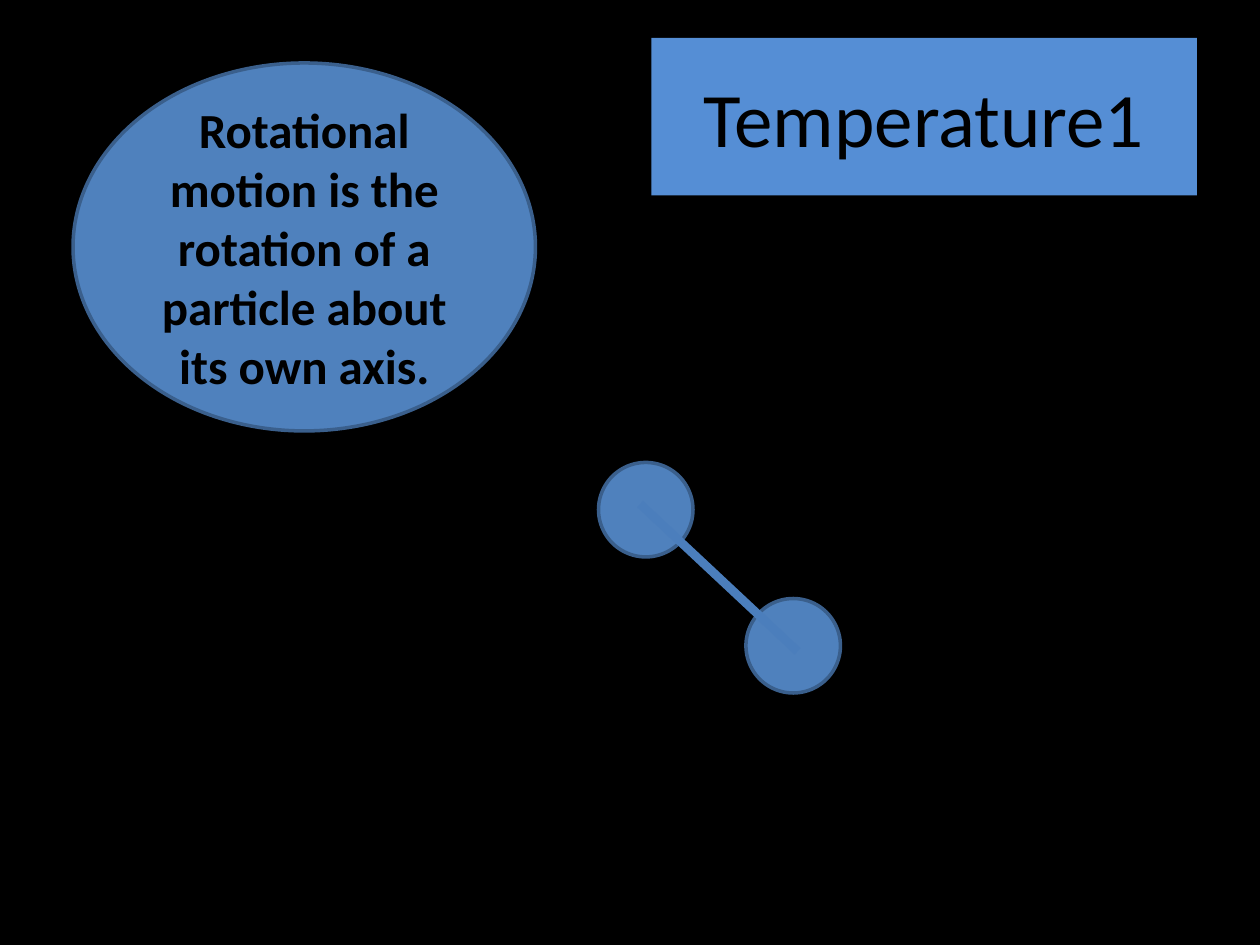
from dataclasses import dataclass

from pptx import Presentation
from pptx import util as u
from pptx.dml.color import RGBColor
from pptx.enum import shapes, text
from pptx.oxml.ns import qn

HUES = {"back": "000000", "title": "558ED5", "fill": "4F81BD",
        "edge": "3A5F8C", "bond": "4B7EBC", "text": "000000"}
FONT = "Calibri"


@dataclass
class Oval:
    left: float
    top: float
    width: float
    height: float


NOTE = Oval(0.58, 0.5, 3.67, 2.92)
ATOMS = [Oval(4.75, 3.67, 0.75, 0.75), Oval(5.92, 4.75, 0.75, 0.75)]
BOND = (5.08, 4, 6.33, 5.17)


def hue(name: str) -> RGBColor:
    return RGBColor.from_string(HUES[name])


def paint(fill, name: str) -> None:
    fill.solid()
    fill.fore_color.rgb = hue(name)


def write(shape, words: str, size: float, bold: bool = False) -> None:
    frame = shape.text_frame
    frame.text = words
    frame.word_wrap = True
    frame.vertical_anchor = text.MSO_ANCHOR.MIDDLE
    para = frame.paragraphs[0]
    para.alignment = text.PP_ALIGN.CENTER
    font = para.runs[0].font
    font.name, font.size, font.bold = FONT, u.Pt(size), bold
    font.color.rgb = hue("text")


def add_oval(host, oval: Oval):
    """Draw an outlined ellipse on a slide's or a group's shape tree."""
    shape = host.add_shape(
        shapes.MSO_SHAPE.OVAL, u.Inches(oval.left), u.Inches(oval.top),
        u.Inches(oval.width), u.Inches(oval.height))
    shape.shadow.inherit = False
    paint(shape.fill, "fill")
    shape.line.color.rgb = hue("edge")
    shape.line.width = u.Pt(2)
    return shape


def add_bond(host, ends: tuple) -> None:
    line = host.add_connector(
        shapes.MSO_CONNECTOR.STRAIGHT, *(u.Inches(end) for end in ends))
    line.line.color.rgb = hue("bond")
    line.line.width = u.Pt(5)
    props = line.element.spPr
    props.append(props.makeelement(qn("a:effectLst"), {}))


def main() -> None:
    deck = Presentation()
    deck.slide_width, deck.slide_height = u.Inches(10), u.Inches(7.5)
    slide = deck.slides.add_slide(deck.slide_layouts[5])
    paint(slide.background.fill, "back")

    title = slide.shapes.title
    title.left, title.top = u.Inches(5.17), u.Inches(0.3)
    title.width, title.height = u.Inches(4.33), u.Inches(1.25)
    paint(title.fill, "title")
    write(title, "Temperature1", 44)

    note = add_oval(slide.shapes, NOTE)
    write(note, "Rotational motion is the rotation of a particle "
                "about its own axis.", 28, bold=True)

    pair = slide.shapes.add_group_shape()
    for atom in ATOMS:
        add_oval(pair.shapes, atom)
    add_bond(pair.shapes, BOND)

    deck.save("out.pptx")


if __name__ == "__main__":
    main()
